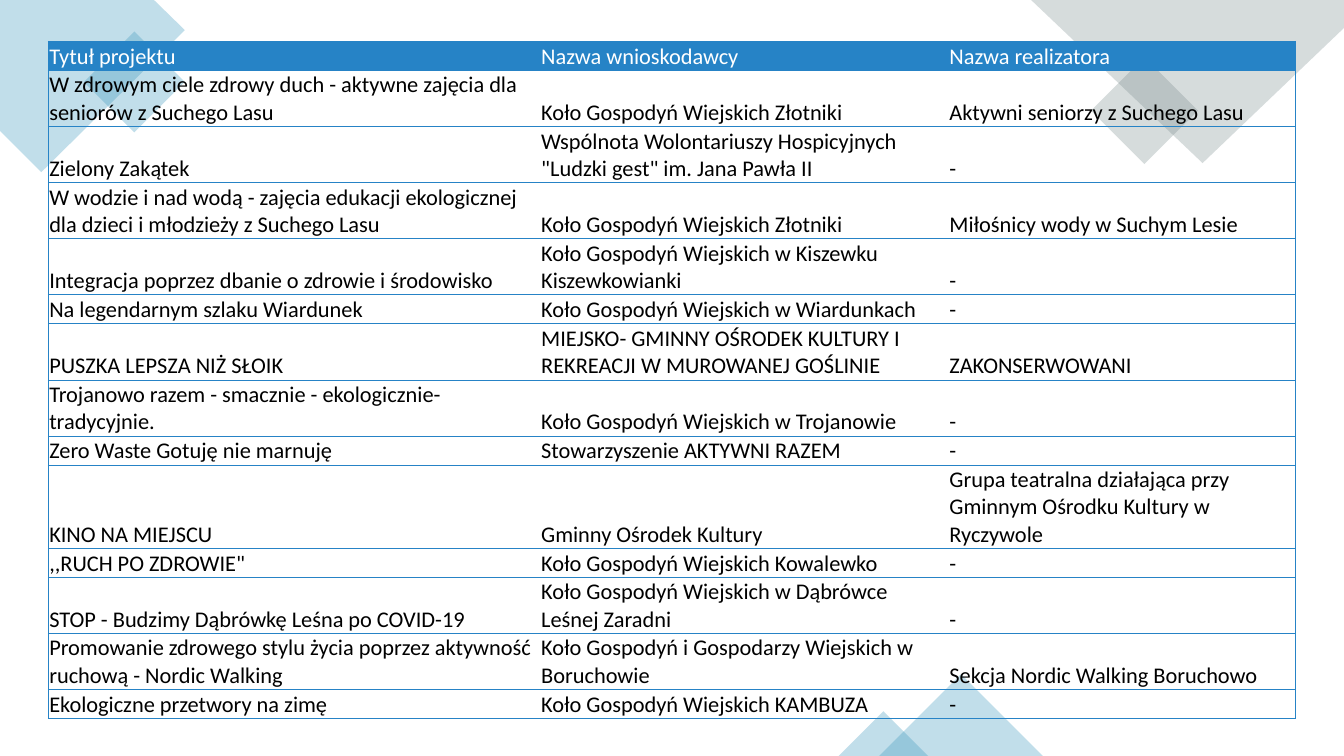
"""Build the slide listing projects, applicants and implementers."""
from lxml import etree
from pptx import Presentation
from pptx import util as u
from pptx.dml.color import RGBColor
from pptx.enum import shapes, text
from pptx.oxml.ns import qn

BLUE, TEAL, GREY = "2683C6", "3494BA", "7A8C8E"
NO_STYLE = "{2D5ABB26-0587-4C30-8999-92F81FD0307C}"
FONT = {"name": "Calibri", "size": u.Pt(16), "bold": False}
CELL = {
    "margin_left": u.Pt(0.72),
    "margin_top": u.Pt(0.72),
    "margin_right": u.Pt(0.72),
    "margin_bottom": 0,
    "vertical_anchor": text.MSO_ANCHOR.BOTTOM,
}
COLUMNS = (351.4, 291.6, 247.7)
FIRST_LINE, NEXT_LINE = 20.7, 19.4

PROJECTS = [
    (1, "Tytuł projektu", "Nazwa wnioskodawcy", "Nazwa realizatora"),
    (2, "W zdrowym ciele zdrowy duch - aktywne zajęcia dla seniorów z Suchego Lasu",
     "Koło Gospodyń Wiejskich Złotniki", "Aktywni seniorzy z Suchego Lasu"),
    (2, "Zielony Zakątek",
     'Wspólnota Wolontariuszy Hospicyjnych "Ludzki gest" im. Jana Pawła II', "-"),
    (2, "W wodzie i nad wodą - zajęcia edukacji ekologicznej dla dzieci i młodzieży z Suchego Lasu",
     "Koło Gospodyń Wiejskich Złotniki", "Miłośnicy wody w Suchym Lesie"),
    (2, "Integracja poprzez dbanie o zdrowie i środowisko",
     "Koło Gospodyń Wiejskich w Kiszewku Kiszewkowianki", "-"),
    (1, "Na legendarnym szlaku Wiardunek", "Koło Gospodyń Wiejskich w Wiardunkach", "-"),
    (2, "PUSZKA LEPSZA NIŻ SŁOIK",
     "MIEJSKO- GMINNY OŚRODEK KULTURY I REKREACJI W MUROWANEJ GOŚLINIE", "ZAKONSERWOWANI"),
    (2, "Trojanowo razem - smacznie - ekologicznie- tradycyjnie.",
     "Koło Gospodyń Wiejskich w Trojanowie", "-"),
    (1, "Zero Waste Gotuję nie marnuję", "Stowarzyszenie AKTYWNI RAZEM", "-"),
    (3, "KINO NA MIEJSCU", "Gminny Ośrodek Kultury",
     "Grupa teatralna działająca przy Gminnym Ośrodku Kultury w Ryczywole"),
    (1, ',,RUCH PO ZDROWIE"', "Koło Gospodyń Wiejskich Kowalewko", "-"),
    (2, "STOP - Budzimy Dąbrówkę Leśna po COVID-19",
     "Koło Gospodyń Wiejskich w Dąbrówce Leśnej Zaradni", "-"),
    (2, "Promowanie zdrowego stylu życia poprzez aktywność ruchową - Nordic Walking",
     "Koło Gospodyń i Gospodarzy Wiejskich w Boruchowie", "Sekcja Nordic Walking Boruchowo"),
    (1, "Ekologiczne przetwory na zimę", "Koło Gospodyń Wiejskich KAMBUZA", "-"),
]


def paint(target, color):
    target.solid()
    target.fore_color.rgb = RGBColor.from_string(color)


def apply(target, values):
    for name, value in values.items():
        setattr(target, name, value)


class Deck:
    def __init__(self, width, height):
        self.prs = Presentation()
        apply(self.prs, {"slide_width": u.Pt(width), "slide_height": u.Pt(height)})
        self.s = self.prs.slides.add_slide(self.prs.slide_layouts[6])

    def tint(self, sp, color):
        sp.shadow.inherit = False
        paint(sp.fill, color)
        sp.line.fill.background()
        rgb = sp.fill._xPr.find(qn("a:solidFill"))[0]
        etree.SubElement(rgb, qn("a:alpha"), val="30000")

    def shape(self, kind, box, color, rotation=0):
        sp = self.s.shapes.add_shape(kind, *map(u.Pt, box))
        sp.rotation = rotation
        self.tint(sp, color)

    def outline(self, points, color):
        first, *rest = [(u.Pt(x), u.Pt(y)) for x, y in points]
        fb = self.s.shapes.build_freeform(*first)
        fb.add_line_segments(rest, close=True)
        self.tint(fb.convert_to_shape(), color)

    def borders(self, cell, sides):
        tcPr = cell._tc.get_or_add_tcPr()
        for side in sides:
            ln = etree.SubElement(tcPr, qn(f"a:ln{side}"), w=str(u.Pt(0.5)))
            fill = etree.SubElement(ln, qn("a:solidFill"))
            etree.SubElement(fill, qn("a:srgbClr"), val=BLUE)

    def cell(self, cell, content, sides, header):
        apply(cell, CELL)
        self.borders(cell, sides)
        if header:
            paint(cell.fill, BLUE)
        else:
            cell.fill.background()
        r = cell.text_frame.paragraphs[0].add_run()
        r.text = content
        apply(r.font, FONT)
        paint(r.font.fill, "FFFFFF" if header else "000000")

    def table(self, left, top, columns, rows):
        heights = [FIRST_LINE + NEXT_LINE * (row[0] - 1) for row in rows]
        box = map(u.Pt, (left, top, sum(columns), sum(heights)))
        tbl = self.s.shapes.add_table(len(rows), len(columns), *box).table
        tbl.horz_banding = False
        tbl._tbl.tblPr.find(qn("a:tableStyleId")).text = NO_STYLE
        for column, width in zip(tbl.columns, columns):
            column.width = u.Pt(width)
        for i, (_, *contents) in enumerate(rows):
            tbl.rows[i].height = u.Pt(heights[i])
            for j, content in enumerate(contents):
                sides = {0: "LTB", len(columns) - 1: "RTB"}.get(j, "TB")
                self.cell(tbl.cell(i, j), content, sides, i == 0)


def main():
    deck = Deck(960, 540)
    square = shapes.MSO_SHAPE.RECTANGLE
    triangle = shapes.MSO_SHAPE.ISOSCELES_TRIANGLE
    deck.outline([(110, 0), (0, 0), (0, 93.5), (29.5, 123), (132, 21.5)], TEAL)
    deck.shape(square, (70.5, 33, 51, 51), TEAL, 315)
    deck.shape(square, (790.5, 52, 54, 54), GREY, 315)
    deck.outline([(960, 0), (736.5, 0), (859, 116.5), (960, 20)], GREY)
    deck.shape(triangle, (628, 481.5, 117, 58.5), TEAL)
    deck.shape(triangle, (599, 508, 64, 32), TEAL)
    deck.table(34.5, 29.5, COLUMNS, PROJECTS)
    deck.prs.save("out.pptx")


if __name__ == "__main__":
    main()
